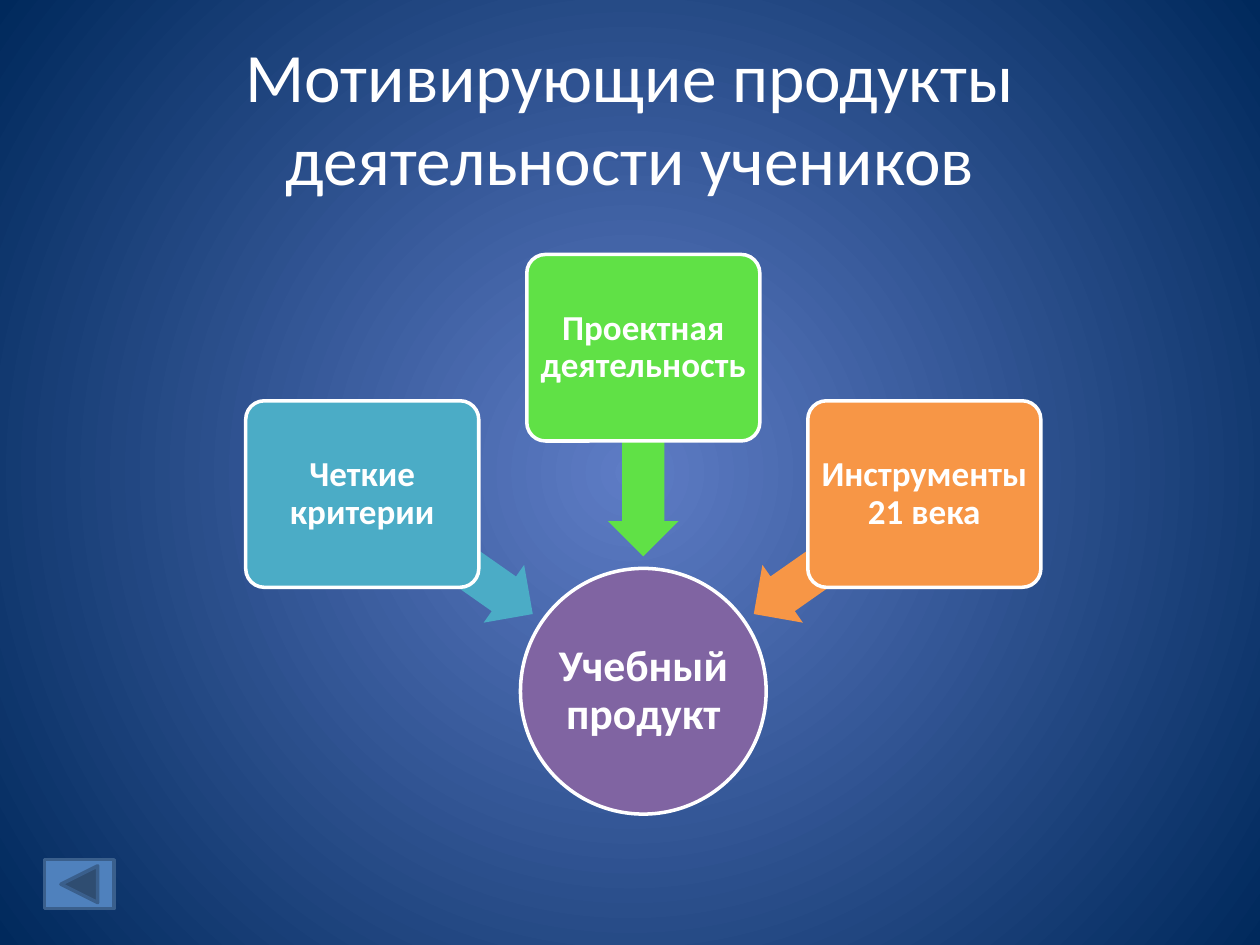
from pptx import Presentation
from pptx.dml.color import RGBColor
from pptx.enum import shapes, text
from pptx.oxml import ns, xmlchemy
from pptx.util import Pt

COLORS = {
    "glow": "5E7CC5", "edge": "00295C", "white": "FFFFFF",
    "teal": "4BACC6", "green": "60E146", "orange": "F79646",
    "purple": "8064A2", "button": "4F81BD", "button_line": "3A5F8C",
}
FONT = "Calibri"
AXIS_X = 367.6
BOX_W, BOX_H, BOX_STEP = 133.2, 106.6, 160.6
ARROW_W, ARROW_H, ARROW_STEP = 118.8, 40.3, 111.8
HUB_SIZE, HUB_Y = 140.4, 395

# label, colour, column, box centre y, arrow centre y, arrow rotation
SOURCES = [
    ("Четкие критерии", "teal", -1, 282.3, 316.8, 215),
    ("Проектная деятельность", "green", 0, 198.7, 258.5, 270),
    ("Инструменты 21 века", "orange", 1, 282.3, 316.8, 325),
]


def rgb(name):
    return RGBColor.from_string(COLORS[name])


def paint_background(slide):
    """Radial gradient, light in the middle."""
    fill = slide.background.fill
    fill.gradient()
    for stop, name, position in zip(fill.gradient_stops, ("glow", "edge"), (0, 1)):
        stop.color.rgb = rgb(name)
        stop.position = position
    gradient = next(slide.element.iter(ns.qn("a:gradFill")))
    for linear in gradient.findall(ns.qn("a:lin")):
        gradient.remove(linear)
    circle = xmlchemy.OxmlElement("a:path")
    circle.set("path", "circle")
    center = xmlchemy.OxmlElement("a:fillToRect")
    for side in "ltrb":
        center.set(side, "50000")
    circle.append(center)
    gradient.append(circle)


def write(frame, words, size, bold):
    frame.text = words
    frame.word_wrap = True
    frame.vertical_anchor = text.MSO_ANCHOR.MIDDLE
    paragraph = frame.paragraphs[0]
    paragraph.alignment = text.PP_ALIGN.CENTER
    font = paragraph.runs[0].font
    font.name, font.size, font.bold = FONT, Pt(size), bold
    font.color.rgb = rgb("white")
    return paragraph


def add_title(slide, words):
    title = slide.shapes.title
    title.left, title.top, title.width, title.height = map(Pt, (36, 21.6, 648, 90))
    write(title.text_frame, words, 39.6, False)


def add_figure(slide, kind, center, size, fill, line=None):
    (x, y), (w, h) = center, size
    figure = slide.shapes.add_shape(kind, Pt(x - w / 2), Pt(y - h / 2), Pt(w), Pt(h))
    figure.shadow.inherit = False
    figure.fill.solid()
    figure.fill.fore_color.rgb = rgb(fill)
    if line:
        figure.line.color.rgb = rgb(line)
        figure.line.width = Pt(2)
    else:
        figure.line.fill.background()
    return figure


def add_label(figure, words, size, inset):
    frame = figure.text_frame
    frame.margin_left = frame.margin_right = Pt(inset)
    frame.margin_top = frame.margin_bottom = Pt(inset)
    write(frame, words, size, True).line_spacing = 0.9


def add_source(slide, label, color, column, box_y, arrow_y, rotation):
    """A box and the arrow from it to the hub."""
    arrow = add_figure(slide, shapes.MSO_SHAPE.LEFT_ARROW,
                       (AXIS_X + column * ARROW_STEP, arrow_y), (ARROW_W, ARROW_H), color)
    arrow.rotation = rotation
    arrow.adjustments[0], arrow.adjustments[1] = 0.6, 0.5
    box = add_figure(slide, shapes.MSO_SHAPE.ROUNDED_RECTANGLE,
                     (AXIS_X + column * BOX_STEP, box_y), (BOX_W, BOX_H), color, "white")
    box.adjustments[0] = 0.1
    add_label(box, label, 20, 2.5)


def main():
    deck = Presentation()
    deck.slide_width, deck.slide_height = Pt(720), Pt(540)
    slide = deck.slides.add_slide(deck.slide_layouts[5])
    paint_background(slide)
    add_title(slide, "Мотивирующие продукты деятельности учеников")
    add_figure(slide, shapes.MSO_SHAPE.ACTION_BUTTON_BACK_OR_PREVIOUS,
               (45.3, 505.3), (39.6, 28), "button", "button_line")
    hub = add_figure(slide, shapes.MSO_SHAPE.OVAL, (AXIS_X, HUB_Y),
                     (HUB_SIZE, HUB_SIZE), "purple", "white")
    add_label(hub, "Учебный продукт", 25, 0)
    for source in SOURCES:
        add_source(slide, *source)
    deck.save("out.pptx")


if __name__ == "__main__":
    main()
